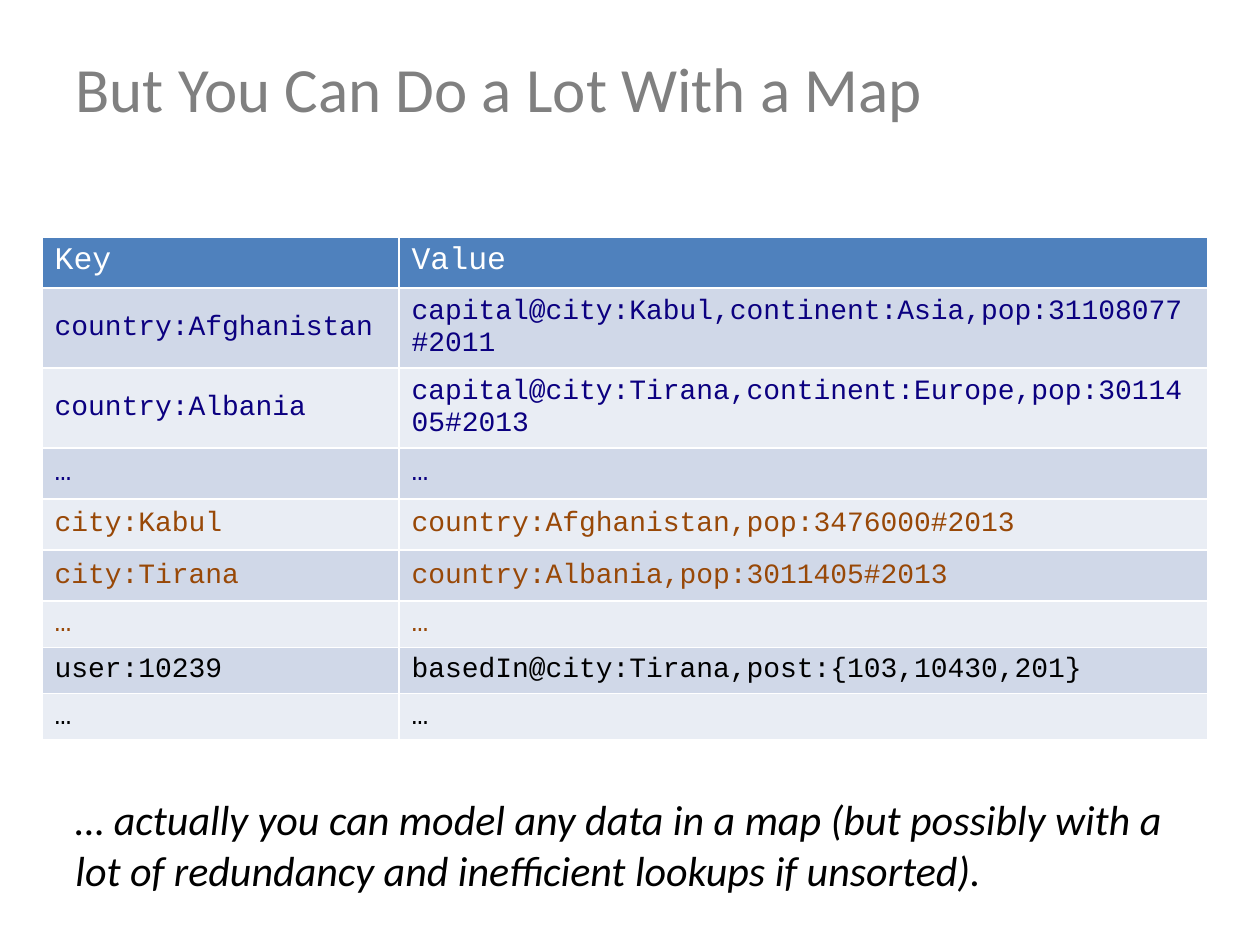
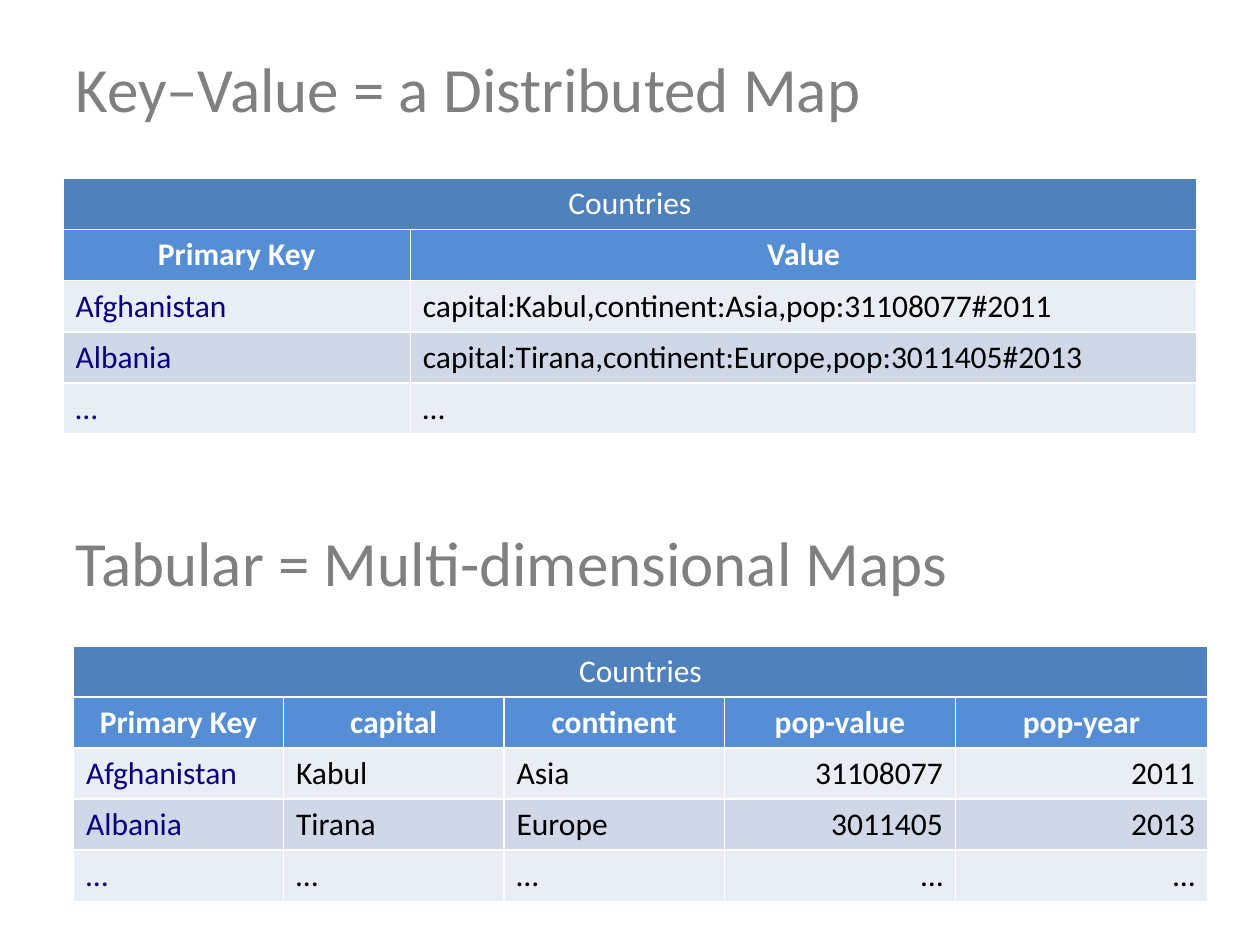
from dataclasses import dataclass

from pptx import Presentation
from pptx.dml.color import RGBColor
from pptx.enum.text import MSO_ANCHOR, MSO_AUTO_SIZE, PP_ALIGN
from pptx.util import Pt

LEFT, CENTER, RIGHT = PP_ALIGN.LEFT, PP_ALIGN.CENTER, PP_ALIGN.RIGHT
TOP, MIDDLE = MSO_ANCHOR.TOP, MSO_ANCHOR.MIDDLE
NO_FIT, GROW = MSO_AUTO_SIZE.NONE, MSO_AUTO_SIZE.SHAPE_TO_FIT_TEXT
TITLE_ONLY = 5


@dataclass(frozen=True)
class Theme:
    """Colours, fonts and type sizes of the deck."""
    sans: str = "Calibri"
    mono: str = "Courier New"
    title_size: int = 36
    note_size: int = 24
    table_size: int = 18
    code_size: int = 16
    grey: str = "808080"
    black: str = "000000"
    white: str = "FFFFFF"
    navy: str = "0B0080"
    brown: str = "984807"
    header: str = "4F81BD"
    subheader: str = "558ED5"
    bands: tuple = ("E9EDF4", "D0D8E8")  # even rows, odd rows


T = Theme()

# Content
MAP_TITLE = "But You Can Do a Lot With a Map"
MAP_HEADER = ("Key", "Value")
MAP_GROUPS = [
    (T.navy, [
        ("country:Afghanistan",
         "capital@city:Kabul,continent:Asia,pop:31108077#2011"),
        ("country:Albania",
         "capital@city:Tirana,continent:Europe,pop:3011405#2013"),
        ("…", "…")]),
    (T.brown, [
        ("city:Kabul", "country:Afghanistan,pop:3476000#2013"),
        ("city:Tirana", "country:Albania,pop:3011405#2013"),
        ("…", "…")]),
    (T.black, [
        ("user:10239", "basedIn@city:Tirana,post:{103,10430,201}"),
        ("…", "…")]),
]
MAP_NOTE = ("… actually you can model any data in a map (but possibly with a "
            "lot of redundancy and inefficient lookups if unsorted).")

KEY_VALUE_TITLE = "Key–Value = a Distributed Map"
TABULAR_TITLE = "Tabular = Multi-dimensional Maps"
CAPTION = "Countries"
KEY_VALUE_ROWS = [
    ("Primary Key", "Value"),
    ("Afghanistan", "capital:Kabul,continent:Asia,pop:31108077#2011"),
    ("Albania", "capital:Tirana,continent:Europe,pop:3011405#2013"),
    ("…", "…"),
]
TABULAR_ROWS = [
    ("Primary Key", "capital", "continent", "pop-value", "pop-year"),
    ("Afghanistan", "Kabul", "Asia", "31108077", "2011"),
    ("Albania", "Tirana", "Europe", "3011405", "2013"),
    ("…", "…", "…", "…", "…"),
]

# Layout, in points
SLIDE_SIZE = (720, 540)
TITLE_BOX = (36, 21.6, 648, 56.2)
TABULAR_TITLE_BOX = (36, 276, 648, 90)
NOTE_BOX = (36, 450, 666, 65.4)
ROW_H, SMALL_ROW_H = 29.2, 10.8
SMALL_ROWS = 3


def set_text(tf, text, size, color, font=T.sans, align=LEFT, bold=False,
             italic=False):
    """Write one uniformly styled paragraph."""
    p = tf.paragraphs[0]
    p.text, p.alignment = text, align
    f = p.font
    f.name, f.size, f.bold, f.italic = font, Pt(size), bold, italic
    f.color.rgb = RGBColor.from_string(color)


def format_title(sp, text, box):
    """Place a shape and style it as a slide heading."""
    sp.left, sp.top, sp.width, sp.height = map(Pt, box)
    tf = sp.text_frame
    tf.word_wrap, tf.auto_size, tf.vertical_anchor = True, NO_FIT, MIDDLE
    set_text(tf, text, T.title_size, T.grey)


def add_slide(prs, title):
    """Add a slide with its title."""
    s = prs.slides.add_slide(prs.slide_layouts[TITLE_ONLY])
    format_title(s.shapes.title, title, TITLE_BOX)
    return s


def add_table(s, left, top, col_widths, row_heights):
    """Add an empty table with the given column widths and row heights."""
    table = s.shapes.add_table(
        len(row_heights), len(col_widths), Pt(left), Pt(top),
        Pt(sum(col_widths)), Pt(sum(row_heights))).table
    for col, width in zip(table.columns, col_widths):
        col.width = Pt(width)
    for row, height in zip(table.rows, row_heights):
        row.height = Pt(height)
    return table


def fill_cell(cell, text, fill, size, color, anchor=TOP, **style):
    """Give a cell its fill and text."""
    cell.fill.solid()
    cell.fill.fore_color.rgb = RGBColor.from_string(fill)
    cell.vertical_anchor = anchor
    set_text(cell.text_frame, text, size, color, **style)


def add_map_table(s, left, top, col_widths):
    """Add the key and value table, coloured by group of keys."""
    rows = [(color, row) for color, group in MAP_GROUPS for row in group]
    heights = ([ROW_H] * (1 + len(rows) - SMALL_ROWS)
               + [SMALL_ROW_H] * SMALL_ROWS)
    table = add_table(s, left, top, col_widths, heights)
    for j, text in enumerate(MAP_HEADER):
        fill_cell(table.cell(0, j), text, T.header, T.table_size, T.white,
                  font=T.mono)
    for i, (color, row) in enumerate(rows, 1):
        for j, text in enumerate(row):
            fill_cell(table.cell(i, j), text, T.bands[i % 2], T.code_size,
                      color, MIDDLE, font=T.mono)


def add_country_table(s, left, top, col_widths, rows):
    """Add a captioned table whose first column is the primary key."""
    table = add_table(s, left, top, col_widths, [ROW_H] * (len(rows) + 1))
    table.cell(0, 0).merge(table.cell(0, len(col_widths) - 1))
    fill_cell(table.cell(0, 0), CAPTION, T.header, T.table_size, T.white,
              align=CENTER)
    for i, row in enumerate(rows, 1):
        for j, text in enumerate(row):
            cell = table.cell(i, j)
            if i == 1:
                fill_cell(cell, text, T.subheader, T.table_size, T.white,
                          align=CENTER, bold=True)
            else:
                numeric = rows[1][j].isdigit()
                fill_cell(cell, text, T.bands[i % 2], T.table_size,
                          T.black if j else T.navy, MIDDLE,
                          align=RIGHT if numeric else LEFT)


def build_map_slide(prs):
    """Build the slide that models data in one map."""
    s = add_slide(prs, MAP_TITLE)
    tf = s.shapes.add_textbox(*map(Pt, NOTE_BOX)).text_frame
    tf.word_wrap, tf.auto_size = True, GROW
    set_text(tf, MAP_NOTE, T.note_size, T.black, italic=True)
    add_map_table(s, 24, 135.5, (204, 462))


def build_comparison_slide(prs):
    """Build the slide that sets key–value against tabular."""
    s = add_slide(prs, KEY_VALUE_TITLE)
    add_country_table(s, 36, 102, (198.5, 449.5), KEY_VALUE_ROWS)
    format_title(s.shapes.add_textbox(*map(Pt, TABULAR_TITLE_BOX)),
                 TABULAR_TITLE, TABULAR_TITLE_BOX)
    add_country_table(s, 42, 369, (120, 126, 126, 132, 144), TABULAR_ROWS)


prs = Presentation()
prs.slide_width, prs.slide_height = map(Pt, SLIDE_SIZE)
build_map_slide(prs)
build_comparison_slide(prs)
prs.save("out.pptx")
